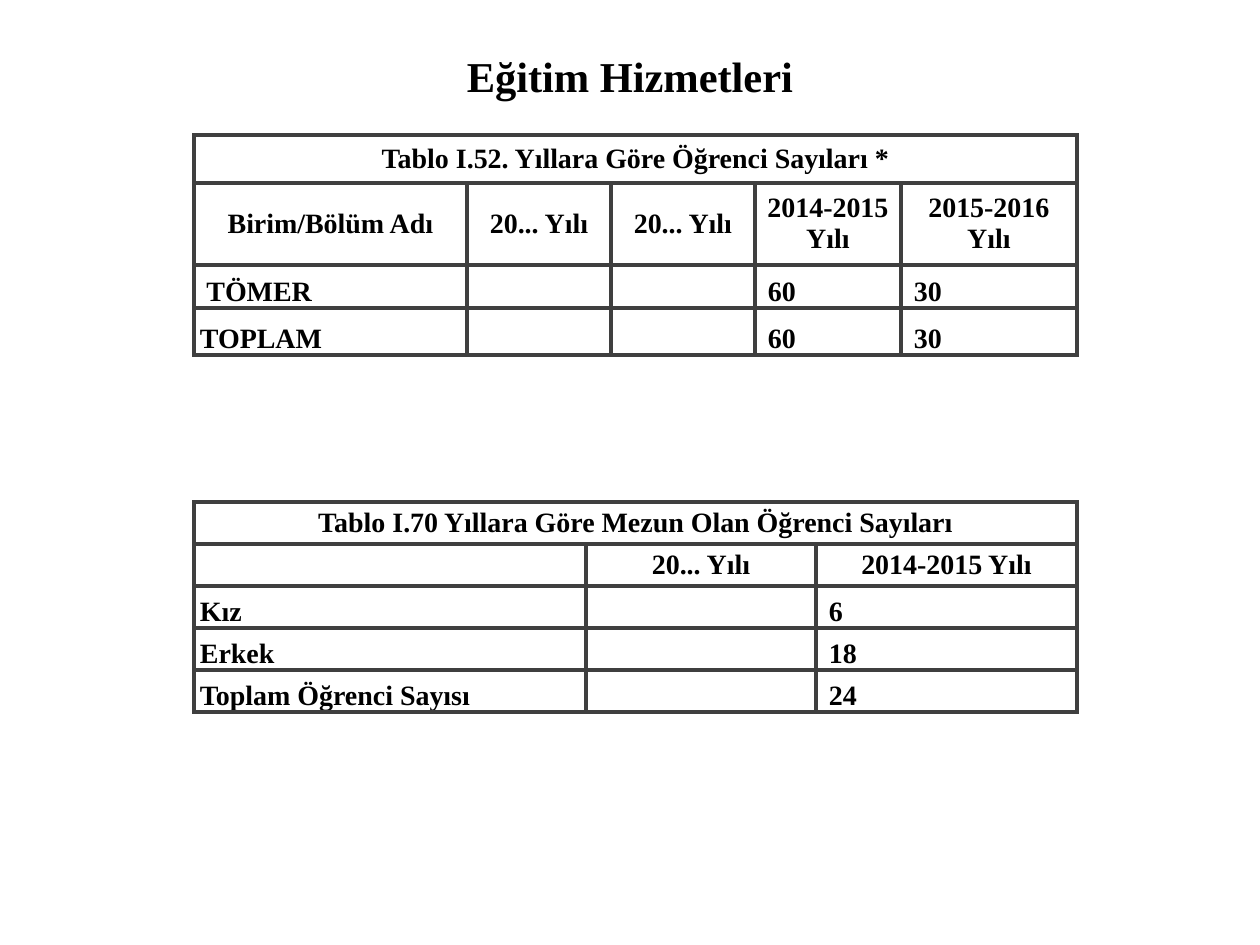
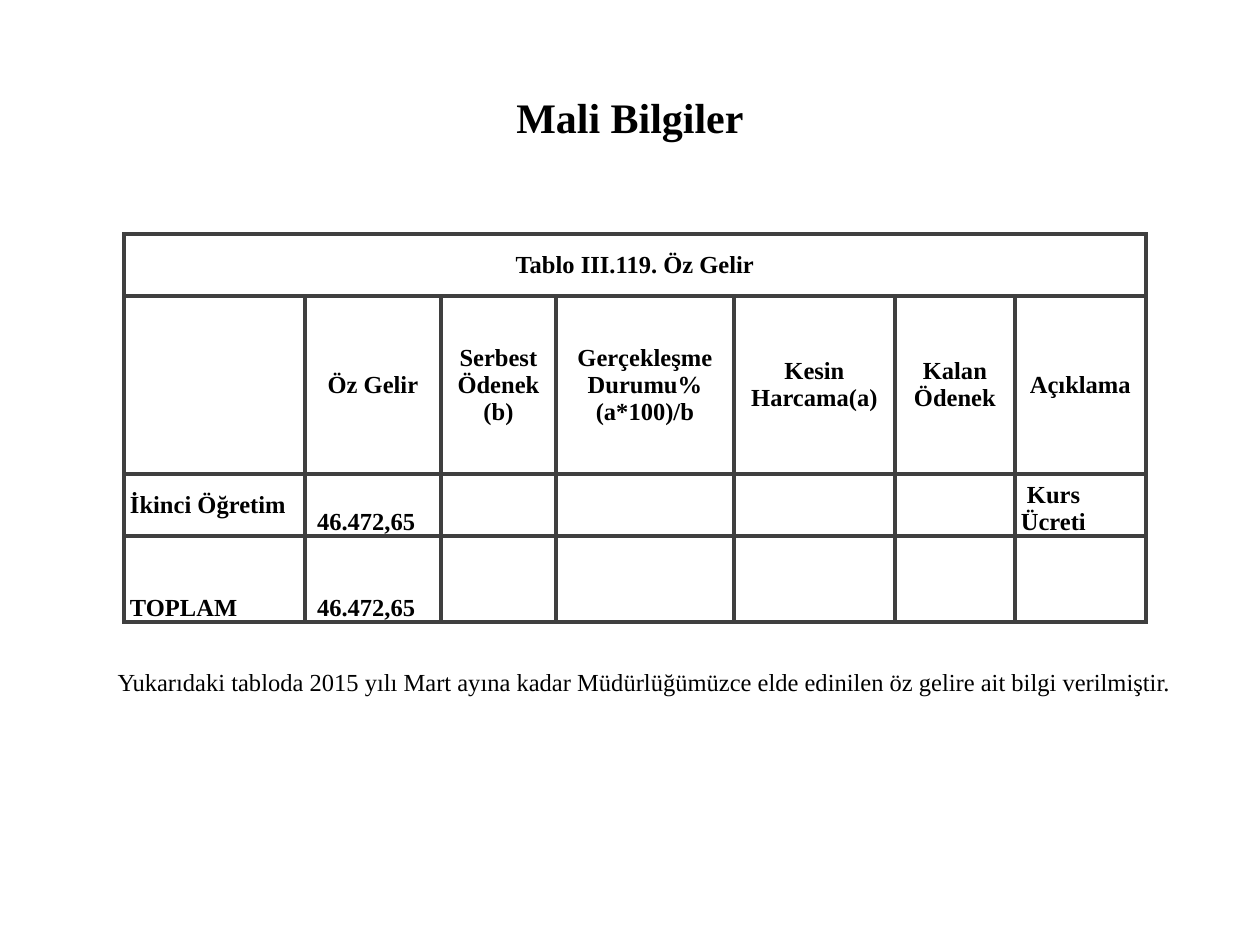
from pptx import Presentation
from pptx import util as u
from pptx.dml.color import RGBColor
from pptx.enum import text as t
from lxml import etree

PX = 914400 // 126
FONT = "Times New Roman"
INK, EDGE, PAPER = "000000", "3F3F3F", "FFFFFF"
NS = "http://schemas.openxmlformats.org/drawingml/2006/main"
MID, LOW = t.MSO_ANCHOR.MIDDLE, t.MSO_ANCHOR.BOTTOM


def px(n):
    return u.Emu(n * PX)


def color(code):
    return RGBColor.from_string(code)


def place(shape, box):
    shape.left, shape.top, shape.width, shape.height = map(px, box)


def style(para, size, bold, align):
    para.alignment = align
    font = para.font
    font.name, font.size, font.bold = FONT, u.Pt(size), bold
    font.color.rgb = color(INK)


def border(cell):
    props = cell._tc.get_or_add_tcPr()
    for side in ("lnL", "lnR", "lnT", "lnB"):
        line = etree.SubElement(props, f"{{{NS}}}{side}", w=str(u.Pt(2.25)))
        fill = etree.SubElement(line, f"{{{NS}}}solidFill")
        etree.SubElement(fill, f"{{{NS}}}srgbClr", val=EDGE)


# Title: lift is the extra bottom inset that raises the text
def add_title(slide, words, size, lift=0):
    title = slide.shapes.title
    place(title, (63, 38, 1134, 157))
    frame = title.text_frame
    frame.text = words
    frame.auto_size = t.MSO_AUTO_SIZE.NONE
    frame.vertical_anchor = MID
    frame.margin_top, frame.margin_bottom = px(6), px(6 + lift)
    style(frame.paragraphs[0], size, True, t.PP_ALIGN.CENTER)


# Table: a caption across the top, a centred header row, then data
def add_grid(slide, left, top, cols, rows, size, caption, data):
    box = map(px, (left, top, sum(cols), sum(rows)))
    grid = slide.shapes.add_table(len(rows), len(cols), *box).table
    grid.first_row = grid.horz_banding = False
    for col, width in zip(grid.columns, cols):
        col.width = px(width)
    lines = [[caption] + [""] * (len(cols) - 1)] + data
    for r, line in enumerate(lines):
        grid.rows[r].height = px(rows[r])
        head = r < 2
        for c, words in enumerate(line):
            cell = grid.cell(r, c)
            border(cell)
            cell.fill.solid()
            cell.fill.fore_color.rgb = color(PAPER)
            cell.margin_left = cell.margin_right = px(6)
            cell.margin_top = cell.margin_bottom = 0
            cell.vertical_anchor = MID if head else LOW
            cell.text = words
            align = t.PP_ALIGN.CENTER if head else t.PP_ALIGN.LEFT
            style(cell.text_frame.paragraphs[0], size, True, align)
    grid.cell(0, 0).merge(grid.cell(0, len(cols) - 1))
    return grid


# Note: justified body text with a hanging indent and no bullet
def add_note(slide, box, words):
    body = slide.placeholders[1]
    place(body, box)
    frame = body.text_frame
    frame.text = words
    frame.auto_size = t.MSO_AUTO_SIZE.NONE
    para = frame.paragraphs[0]
    style(para, 14, False, t.PP_ALIGN.JUSTIFY)
    props = para._p.get_or_add_pPr()
    props.set("marL", str(px(48)))
    props.set("indent", str(px(-48)))
    etree.SubElement(props, f"{{{NS}}}buNone")
    # Bullet settings come before the default run settings
    props.insert(0, props[-1])


def teaching(deck):
    slide = deck.slides.add_slide(deck.slide_layouts[5])
    add_title(slide, "Eğitim Hizmetleri", 24.3, lift=82)
    add_grid(slide, 194, 135, [273, 144, 144, 146, 176], [48, 82, 43, 47], 16,
             "Tablo I.52. Yıllara Göre Öğrenci Sayıları *", [
                 ["Birim/Bölüm Adı", "20... Yılı", "20... Yılı",
                  "2014-2015 Yılı", "2015-2016 Yılı"],
                 [" TÖMER", "", "", " 60", " 30"],
                 ["TOPLAM", "", "", " 60", " 30"]])
    add_grid(slide, 194, 502, [392, 230, 261], [42] * 5, 16,
             "Tablo I.70 Yıllara Göre Mezun Olan Öğrenci Sayıları", [
                 ["", "20... Yılı", "2014-2015 Yılı"],
                 ["Kız", "", " 6"],
                 ["Erkek", "", " 18"],
                 ["Toplam Öğrenci Sayısı", "", " 24"]])


def finance(deck):
    slide = deck.slides.add_slide(deck.slide_layouts[1])
    add_title(slide, "Mali Bilgiler", 24)
    add_note(slide, (105, 661, 1091, 100),
             "Yukarıdaki tabloda 2015 yılı Mart ayına kadar Müdürlüğümüzce "
             "elde edinilen öz gelire ait bilgi verilmiştir.")
    blank = [""] * 4
    grid = add_grid(slide, 124, 234, [181, 136, 115, 178, 161, 120, 131],
                    [62, 178, 62, 86], 14, "Tablo III.119. Öz Gelir", [
                        ["", "Öz Gelir", "Serbest Ödenek (b)",
                         "Gerçekleşme Durumu% (a*100)/b",
                         "Kesin Harcama(a)", "Kalan Ödenek", "Açıklama"],
                        ["İkinci Öğretim", " 46.472,65", *blank,
                         " Kurs Ücreti"],
                        ["TOPLAM", " 46.472,65", *blank, ""]])
    grid.cell(2, 0).vertical_anchor = MID


def main():
    deck = Presentation()
    deck.slide_width, deck.slide_height = u.Inches(10), u.Inches(7.5)
    teaching(deck)
    finance(deck)
    deck.save("out.pptx")


if __name__ == "__main__":
    main()
